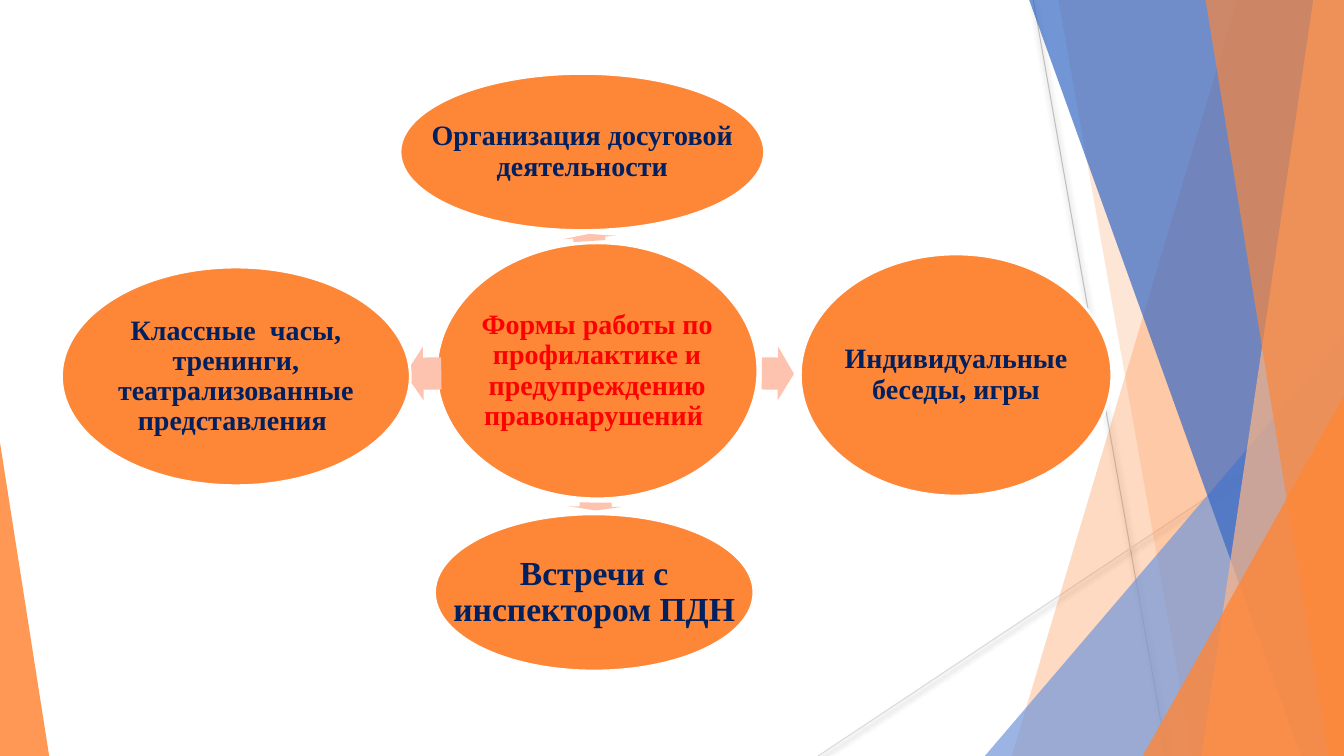
from lxml.etree import SubElement
from pptx import Presentation
from pptx.dml.color import RGBColor
from pptx.enum.shapes import MSO_CONNECTOR, MSO_SHAPE
from pptx.enum.text import MSO_ANCHOR, PP_ALIGN
from pptx.oxml.ns import qn
from pptx.util import Cm, Pt

WIDTH, HEIGHT = 33.87, 19.05
STRIP_TOP = -0.02
FONT = "Times New Roman"
COLORS = {
    "orange": "FE8637", "peach": "FEB687", "sky": "7598D9", "blue": "3668C4",
    "arrow": "FEC3AE", "white": "FFFFFF", "navy": "002060", "red": "FF0000",
    "gray": "BFBFBF", "light gray": "D9D9D9", "black": "000000",
}

# start, end, colour
THIN_LINES = [
    ((26.04, 0), (29.41, HEIGHT), "gray"),
    ((WIDTH, 10.24), (20.62, HEIGHT), "light gray"),
]
# A strip (left edge at top, at bottom) runs to the right side of the slide;
# a triangle has (left, top, width, height) and its apex position.
DECORATIONS = [
    ("strip", (31.19, 25.5), None, "orange", 30),
    ("strip", (26.67, 30.05), None, "orange", 20),
    ("triangle", (24.82, 8.46, 9.05, 10.59), 1, "sky", 72),
    ("strip", (25.93, 32.79), None, "blue", 70),
    ("strip", (33.1, 30.28), None, "peach", 70),
    ("strip", (30.38, 33.48), None, "orange", 65),
    ("triangle", (28.8, 9.98, 5.07, 9.07), 1, "orange", 80),
    ("triangle", (0, 11.15, 1.24, 7.9), 0, "orange", 85),
]
# text, ellipse box, font size, text colour, arrow box, arrow rotation
TOPICS = [
    ("Формы работы по профилактике и предупреждению правонарушений ",
     (11, 6.12, 8.1, 6.45), 20, "red", None, 0),
    ("Организация досуговой деятельности",
     (10.08, 1.85, 9.19, 3.96), 20, "navy", (14.76, 5.31, 0.18, 1.35), 266.3),
    ("Индивидуальные беседы, игры",
     (20.17, 6.4, 7.85, 6.1), 20, "navy", (19.2, 8.74, 0.81, 1.35), 0.7),
    ("Встречи с инспектором ПДН",
     (10.95, 12.95, 8.05, 3.96), 24, "navy", (14.91, 12.09, 0.2, 1.35), 90.7),
    ("Классные  часы, тренинги, театрализованные представления ",
     (1.55, 6.73, 8.79, 5.51), 20, "navy", (10.21, 8.74, 0.91, 1.35), 179.1),
]


def color(name):
    return RGBColor.from_string(COLORS[name])


def lengths(values):
    return [Cm(value) for value in values]


def paint(shape, fill, opacity=100):
    shape.shadow.inherit = False
    shape.fill.solid()
    shape.fill.fore_color.rgb = color(fill)
    shape.line.fill.background()
    if opacity < 100:
        rgb = shape._element.spPr.find(qn("a:solidFill")).find(qn("a:srgbClr"))
        SubElement(rgb, qn("a:alpha"), val=str(opacity * 1000))


def add_thin_line(slide, start, end, line_color):
    line = slide.shapes.add_connector(MSO_CONNECTOR.STRAIGHT, *lengths(start + end))
    line.line.color.rgb = color(line_color)
    line.line.width = Pt(0.75)
    effects = SubElement(line._element.spPr, qn("a:effectLst"))
    shadow = SubElement(effects, qn("a:outerShdw"), blurRad=str(Pt(4)),
                        dist=str(Pt(2)), dir="5400000", rotWithShape="0")
    rgb = SubElement(shadow, qn("a:srgbClr"), val=COLORS["black"])
    SubElement(rgb, qn("a:alpha"), val="40000")


def add_strip(slide, top_left, bottom_left):
    builder = slide.shapes.build_freeform(Cm(top_left), Cm(STRIP_TOP))
    corners = [(WIDTH, STRIP_TOP), (WIDTH, HEIGHT), (bottom_left, HEIGHT)]
    builder.add_line_segments([lengths(corner) for corner in corners], close=True)
    return builder.convert_to_shape()


def add_triangle(slide, box, apex):
    triangle = slide.shapes.add_shape(MSO_SHAPE.ISOSCELES_TRIANGLE, *lengths(box))
    triangle.adjustments[0] = apex
    return triangle


def add_arrow(slide, box, rotation):
    arrow = slide.shapes.add_shape(MSO_SHAPE.RIGHT_ARROW, *lengths(box))
    arrow.adjustments[0] = 0.6
    arrow.adjustments[1] = 0.5
    arrow.rotation = rotation
    paint(arrow, "arrow")


def add_topic(slide, text, box, size, text_color):
    """Draw an ellipse and a label that may use its full width."""
    ellipse = slide.shapes.add_shape(MSO_SHAPE.OVAL, *lengths(box))
    paint(ellipse, "orange")
    ellipse.line.color.rgb = color("white")
    ellipse.line.width = Pt(2)

    frame = slide.shapes.add_textbox(*lengths(box)).text_frame
    frame.word_wrap = True
    frame.vertical_anchor = MSO_ANCHOR.MIDDLE
    frame.margin_left = frame.margin_right = Cm(0.08)
    frame.margin_top = frame.margin_bottom = Cm(0.08)
    paragraph = frame.paragraphs[0]
    paragraph.text = text
    paragraph.alignment = PP_ALIGN.CENTER
    paragraph.line_spacing = 0.9
    paragraph.font.name = FONT
    paragraph.font.size = Pt(size)
    paragraph.font.bold = True
    paragraph.font.color.rgb = color(text_color)


def main():
    presentation = Presentation()
    presentation.slide_width, presentation.slide_height = Cm(WIDTH), Cm(HEIGHT)
    slide = presentation.slides.add_slide(presentation.slide_layouts[6])

    for start, end, line_color in THIN_LINES:
        add_thin_line(slide, start, end, line_color)
    for kind, place, apex, fill, opacity in DECORATIONS:
        if kind == "strip":
            shape = add_strip(slide, *place)
        else:
            shape = add_triangle(slide, place, apex)
        paint(shape, fill, opacity)
    for text, box, size, text_color, arrow_box, rotation in TOPICS:
        if arrow_box:
            add_arrow(slide, arrow_box, rotation)
        add_topic(slide, text, box, size, text_color)

    presentation.save("out.pptx")


if __name__ == "__main__":
    main()
